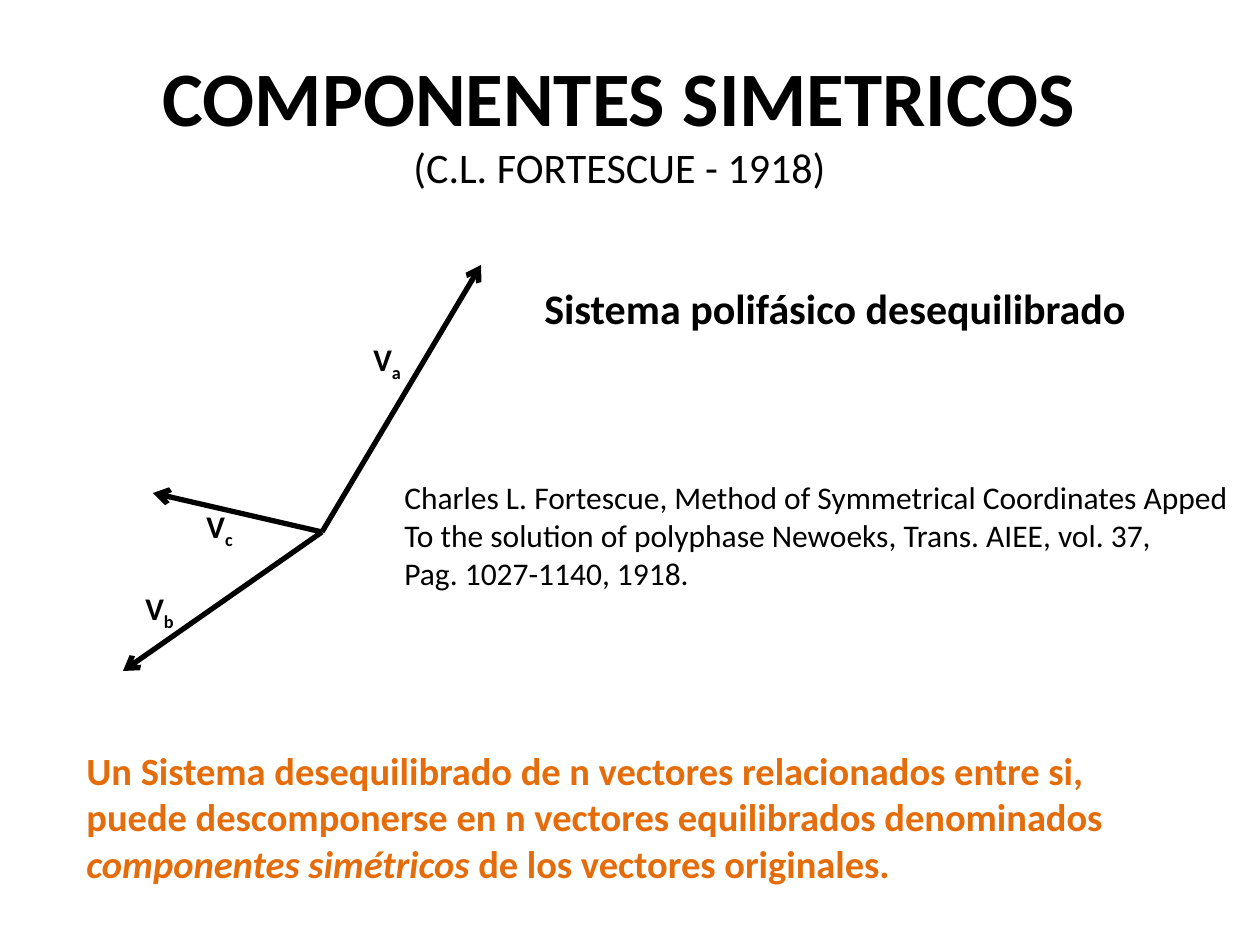
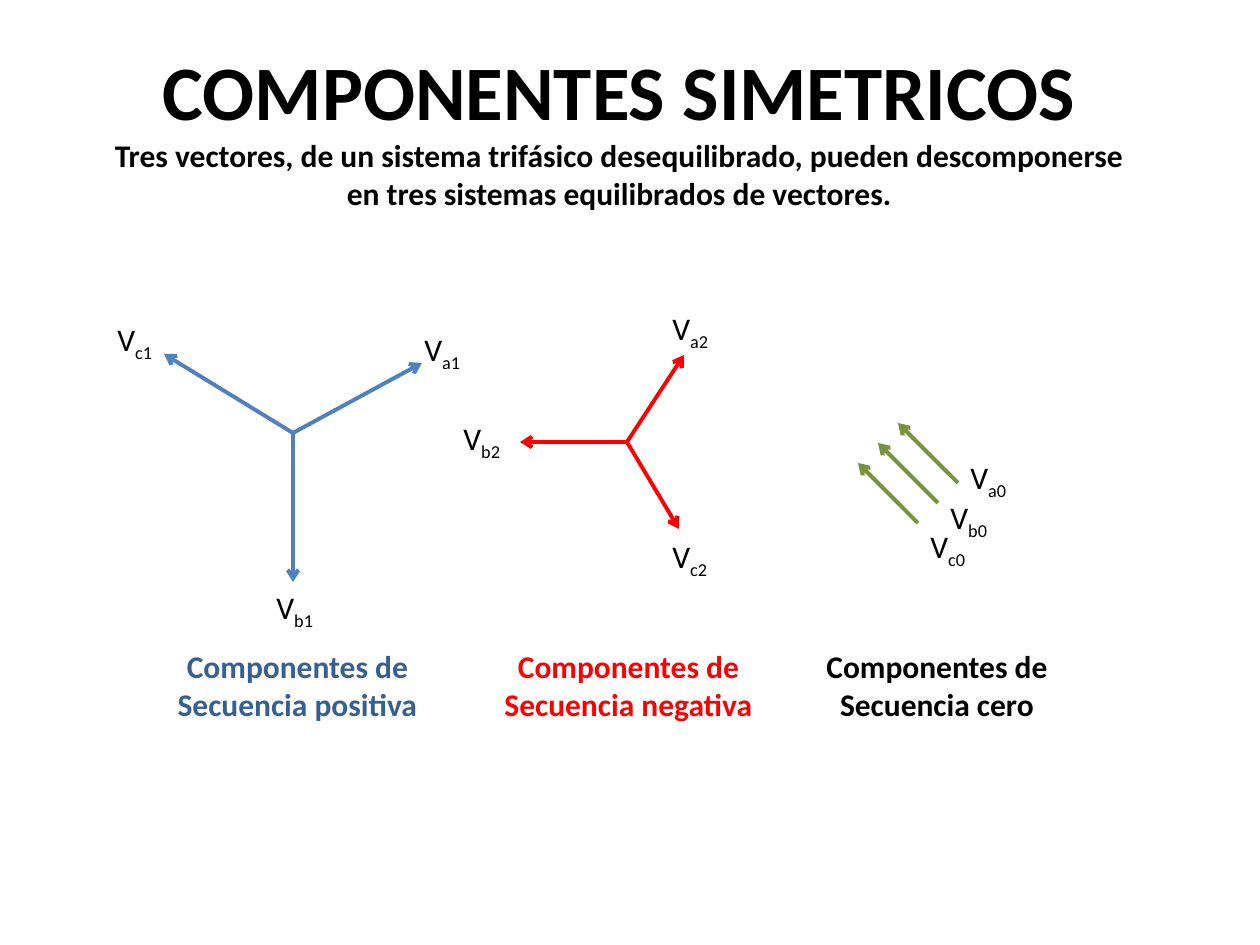
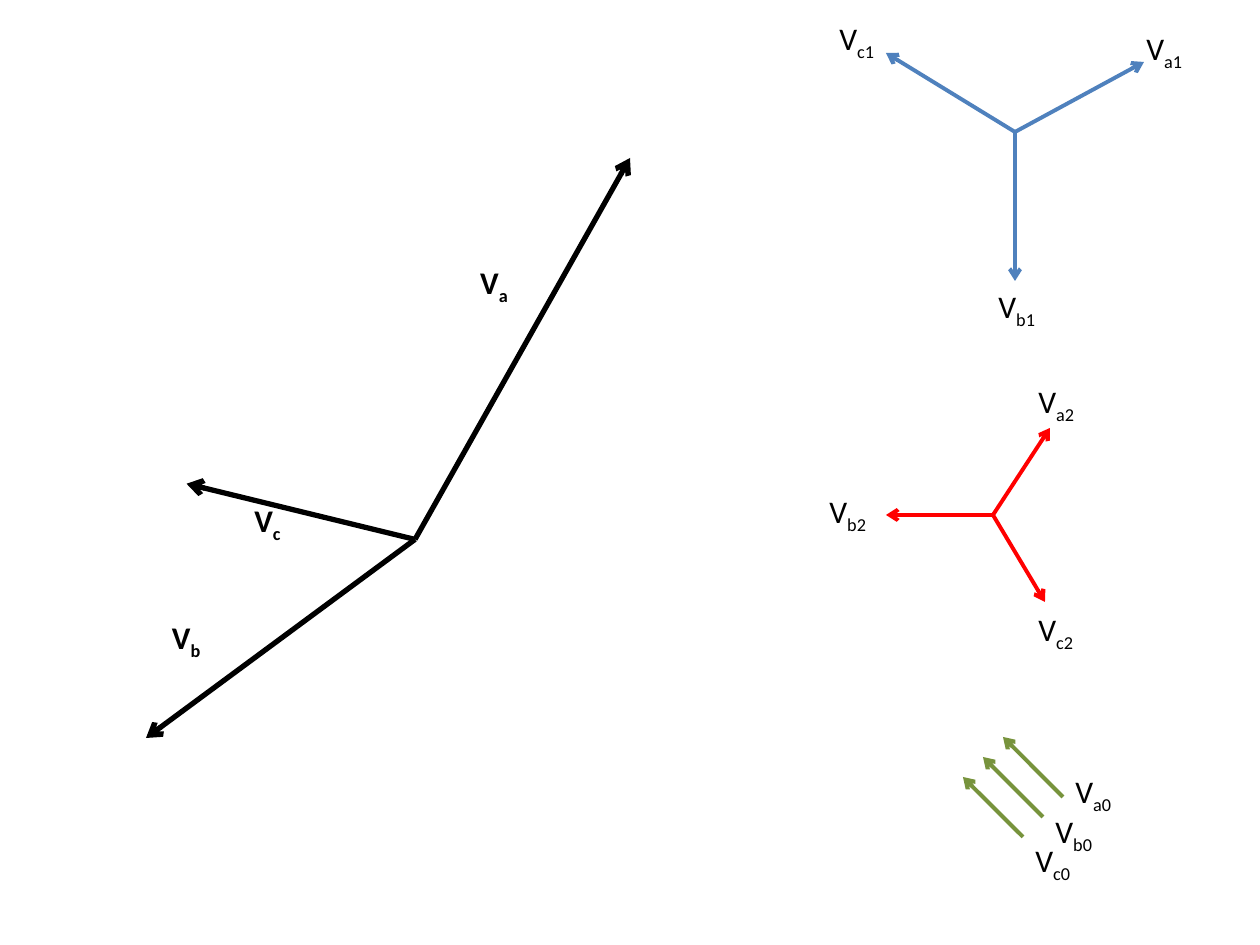
from dataclasses import dataclass

from lxml import etree
from pptx import Presentation
from pptx.dml.color import RGBColor
from pptx.enum.shapes import MSO_CONNECTOR
from pptx.enum.text import MSO_ANCHOR, PP_ALIGN
from pptx.oxml.ns import qn
from pptx.util import Emu, Pt

STRAIGHT = MSO_CONNECTOR.STRAIGHT
TOP, MIDDLE = MSO_ANCHOR.TOP, MSO_ANCHOR.MIDDLE
LEFT, CENTER = PP_ALIGN.LEFT, PP_ALIGN.CENTER

PX_PER_INCH = 126
BLACK = RGBColor(0x00, 0x00, 0x00)
BLUE = RGBColor(0x4F, 0x81, 0xBD)
DARK_BLUE = RGBColor(0x37, 0x60, 0x92)
RED = RGBColor(0xFF, 0x00, 0x00)
GREEN = RGBColor(0x77, 0x93, 0x3C)
ORANGE = RGBColor(0xE4, 0x6C, 0x0A)
FONT = "Calibri"
TITLE = "COMPONENTES SIMETRICOS"


@dataclass
class Diagram:
    """Vectors are (subscript, start, tip, label corner) in px within the size."""
    size: tuple
    color: RGBColor
    weight: float
    label_size: tuple
    vectors: list
    bold: bool = False


UNBALANCED = Diagram((358, 406), BLACK, 3, (58, 51), [
    ("a", (199, 267), (358, 0), (238, 69)),
    ("b", (199, 267), (0, 406), (10, 318)),
    ("c", (199, 267), (30, 228), (71, 236)),
], bold=True)
POSITIVE = Diagram((258, 228), BLUE, 2.25, (66, 51), [
    ("a1", (129, 79), (258, 9), (248, -30)),
    ("b1", (129, 79), (129, 228), (100, 228)),
    ("c1", (129, 79), (0, 0), (-59, -40)),
])
NEGATIVE = Diagram((164, 174), RED, 2.25, (66, 51), [
    ("a2", (107, 87), (164, 0), (140, -52)),
    ("b2", (107, 87), (0, 87), (-69, 58)),
    ("c2", (107, 87), (159, 174), (140, 176)),
])
ZERO = Diagram((100, 100), GREEN, 2.25, (66, 51), [
    (name, (100 - step, 60 + step), (40 - step, step), (100 - step, label_y))
    for name, step, label_y in (("a0", 0, 29), ("b0", 20, 69), ("c0", 40, 98))
])


def px(n):
    return Emu(round(n * 914400 / PX_PER_INCH))


def style(r, size, color=BLACK, bold=False, italic=False):
    r.font.name = FONT
    r.font.size = Pt(size)
    r.font.color.rgb = color
    r.font.bold = bold
    r.font.italic = italic


def add_text(shapes, box, text, size, color=BLACK, bold=False,
             align=LEFT, anchor=TOP, wrap=True):
    tb = shapes.add_textbox(*map(px, box))
    tf = tb.text_frame
    tf.word_wrap = wrap
    tf.vertical_anchor = anchor
    tf.text = text
    for p in tf.paragraphs:
        p.alignment = align
        for r in p.runs:
            style(r, size, color, bold)
    return tf


def add_title(s, box, subtitle, size, bold):
    tf = add_text(s.shapes, box, f"{TITLE}\v{subtitle}", 44, bold=True,
                  align=CENTER, anchor=MIDDLE)
    style(tf.paragraphs[0].runs[1], size, bold=bold)


def add_arrow(shapes, start, tip, color, weight):
    line = shapes.add_connector(STRAIGHT, *map(px, (*start, *tip)))
    line.line.color.rgb = color
    line.line.width = Pt(weight)
    etree.SubElement(line.line._get_or_add_ln(), qn("a:tailEnd"), type="arrow")
    etree.SubElement(line._element.spPr, qn("a:effectLst"))


def add_vector_label(shapes, box, subscript, bold):
    p = add_text(shapes, box, "V", 18, bold=bold).paragraphs[0]
    r = p.add_run()
    r.text = subscript
    style(r, 18, bold=bold)
    r._r.get_or_add_rPr().set("baseline", "-25000")


def add_diagram(s, diagram, left, top, size=None):
    """Group the diagram's vectors and labels, stretched to size if given."""
    width, height = size or diagram.size
    sx, sy = width / diagram.size[0], height / diagram.size[1]

    def place(point):
        return left + point[0] * sx, top + point[1] * sy

    shapes = s.shapes.add_group_shape().shapes
    for _, start, tip, _ in diagram.vectors:
        add_arrow(shapes, place(start), place(tip), diagram.color, diagram.weight)
    label_w, label_h = diagram.label_size
    for subscript, _, _, corner in diagram.vectors:
        box = (*place(corner), label_w * sx, label_h * sy)
        add_vector_label(shapes, box, subscript, diagram.bold)


def build_unbalanced_slide(s):
    add_title(s, (84, 26, 1071, 189), "(C.L. FORTESCUE - 1918)", 24, False)
    add_diagram(s, UNBALANCED, 123, 265)
    add_text(s.shapes, (532, 276, 654, 63), "Sistema polifásico desequilibrado",
             24, bold=True)
    add_text(s.shapes, (392, 472, 868, 127),
             "Charles L. Fortescue, Method of Symmetrical Coordinates Apped\n"
             "To the solution of polyphase Newoeks, Trans. AIEE, vol. 37,\n"
             "Pag. 1027-1140, 1918.", 18)
    tf = add_text(s.shapes, (74, 741, 1091, 152),
                  "Un Sistema desequilibrado de n vectores relacionados entre si, "
                  "puede descomponerse en n vectores equilibrados denominados",
                  22, ORANGE, bold=True)
    for text, italic in ((" componentes simétricos", True),
                         (" de los vectores originales.", False)):
        r = tf.paragraphs[0].add_run()
        r.text = text
        style(r, 22, ORANGE, bold=True, italic=italic)


def build_sequences_slide(s):
    add_title(s, (84, 26, 1071, 203),
              "Tres vectores, de un sistema trifásico desequilibrado, pueden "
              "descomponerse en tres sistemas equilibrados de vectores.", 18, True)
    for diagram, left, top, name, color, caption_left, caption_w in (
            (POSITIVE, 164, 354, "positiva", DARK_BLUE, 164, 267),
            (NEGATIVE, 520, 355, "negativa", RED, 491, 275),
            (ZERO, 858, 423, "cero", BLACK, 809, 256)):
        add_diagram(s, diagram, left, top)
        add_text(s.shapes, (caption_left, 641, caption_w, 90),
                 f"Componentes de\nSecuencia {name}", 18, color, bold=True,
                 align=CENTER, wrap=False)


def build_decomposition_slide(s):
    add_diagram(s, POSITIVE, 886, 53)
    add_diagram(s, NEGATIVE, 886, 428)
    add_diagram(s, ZERO, 963, 737)
    add_diagram(s, UNBALANCED, 146, 158, (484, 580))


def main():
    prs = Presentation()
    prs.slide_width, prs.slide_height = px(1260), px(945)
    blank = prs.slide_layouts[6]
    for build in (build_unbalanced_slide, build_sequences_slide,
                  build_decomposition_slide):
        build(prs.slides.add_slide(blank))
    prs.save("out.pptx")


if __name__ == "__main__":
    main()
